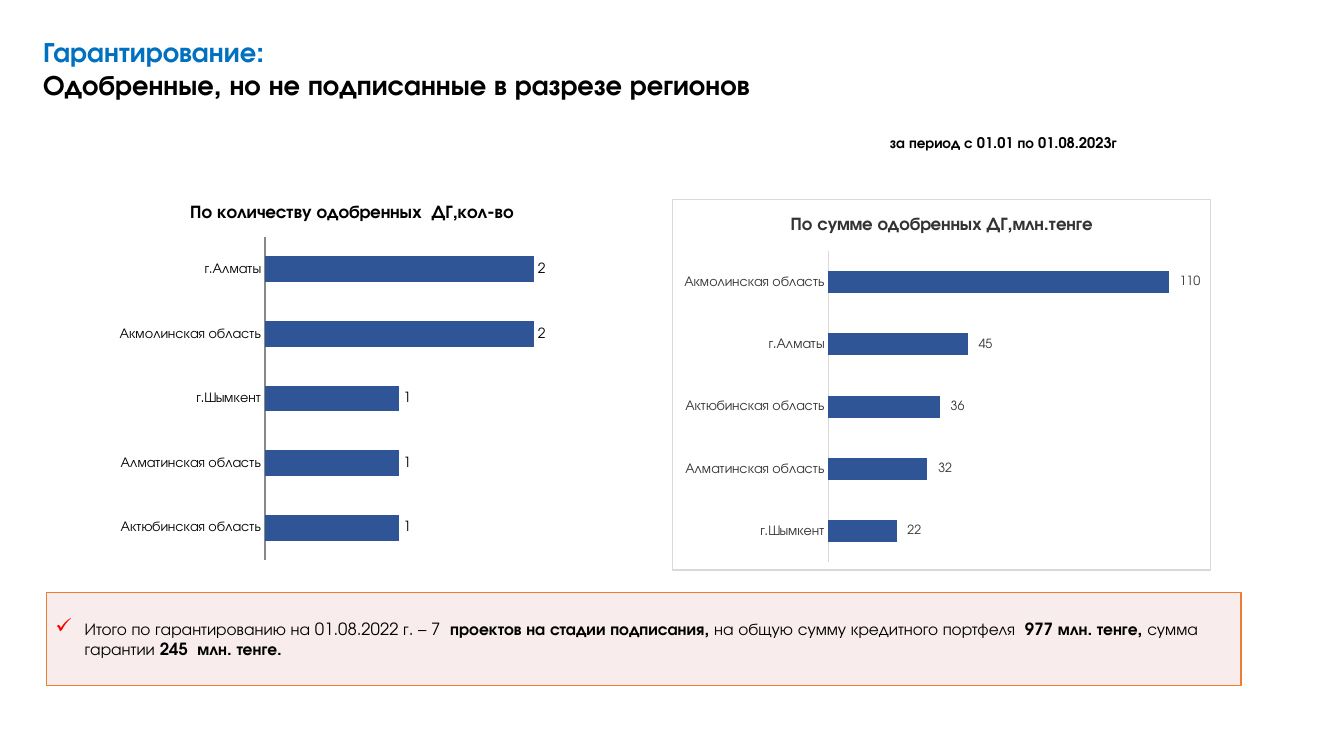
"""Build the slide on approved but unsigned guarantees by region."""
import dataclasses

import lxml.etree
import pptx
import pptx.chart.data
import pptx.dml.color
import pptx.enum.chart
import pptx.enum.shapes
import pptx.enum.text
import pptx.oxml.ns
import pptx.util


@dataclasses.dataclass(frozen=True)
class Theme:
    """Hold the fonts, colours and type sizes."""
    font: str = "TeX Gyre Adventor"
    ink: str = "000000"
    soft: str = "333333"
    blue: str = "0070C0"
    bar: str = "2F5597"
    axis: str = "898989"
    pale: str = "D9D9D9"
    paper: str = "FFFFFF"
    rose: str = "F2DCDB"
    edge: str = "ED7D31"
    tick: str = "FF0000"
    head: float = 20
    date: float = 10.5
    note: float = 12
    title: float = 13
    label: float = 10
    small: float = 9


THEME = Theme()
WIDE, HIGH = pptx.util.Inches(13.33), pptx.util.Inches(7.5)
MONEY = '_-* #\\ ##0_р_._-;\\-* #\\ ##0_р_._-;_-* "-"'


def place(left, top, width, height):
    """Turn percentages of the slide into lengths."""
    return (int(WIDE * left / 100), int(HIGH * top / 100),
            int(WIDE * width / 100), int(HIGH * height / 100))


def tint(code):
    """Return the colour of a hex code."""
    return pptx.dml.color.RGBColor.from_string(code)


def style(font, size, color, bold=False):
    """Set face, size, colour and weight of a font."""
    font.name = THEME.font
    font.size = pptx.util.Pt(size)
    font.bold = bold
    font.color.rgb = tint(color)


def add_run(para, text, size, color, bold=False):
    """Add one styled run."""
    run = para.add_run()
    run.text = text
    style(run.font, size, color, bold)


def add_node(root, tag, **attrs):
    """Append an XML element with attributes."""
    return lxml.etree.SubElement(root, pptx.oxml.ns.qn(tag), attrs)


def add_text(slide, area, lines, size, wrap=True):
    """Add a box of bold coloured lines."""
    frame = slide.shapes.add_textbox(*place(*area)).text_frame
    frame.word_wrap = wrap
    para = frame.paragraphs[0]
    for index, (text, color) in enumerate(lines):
        if index:
            para.add_line_break()
        add_run(para, text, size, color, True)


def add_note(slide, area, parts):
    """Add the tinted panel with its ticked summary."""
    panel = slide.shapes.add_shape(
        pptx.enum.shapes.MSO_SHAPE.RECTANGLE, *place(*area))
    panel.shadow.inherit = False
    panel.fill.solid()
    panel.fill.fore_color.rgb = tint(THEME.rose)
    shade = panel.element.spPr.find(".//" + pptx.oxml.ns.qn("a:srgbClr"))
    add_node(shade, "a:alpha", val="50000")
    panel.line.color.rgb = tint(THEME.edge)
    panel.line.width = pptx.util.Pt(1)
    frame = panel.text_frame
    frame.word_wrap = True
    frame.vertical_anchor = pptx.enum.text.MSO_ANCHOR.MIDDLE
    frame.margin_left = frame.margin_right = pptx.util.Inches(0.08)
    frame.margin_top = frame.margin_bottom = pptx.util.Inches(0.04)
    para = frame.paragraphs[0]
    para.alignment = pptx.enum.text.PP_ALIGN.LEFT
    para.space_after = pptx.util.Pt(6)
    props = para._p.get_or_add_pPr()
    props.set("marL", str(pptx.util.Inches(0.3)))
    props.set("indent", str(pptx.util.Inches(-0.29)))
    add_node(add_node(props, "a:buClr"), "a:srgbClr", val=THEME.tick)
    add_node(props, "a:buSzPct", val="125000")
    add_node(props, "a:buChar", char="✓")
    for text, bold in parts:
        add_run(para, text, THEME.note, THEME.ink, bold)


def set_plot(chart, shares):
    """Fix the inner plot area as shares of the chart."""
    area = chart.element.find(".//" + pptx.oxml.ns.qn("c:plotArea"))
    old = area.find(pptx.oxml.ns.qn("c:layout"))
    if old is not None:
        area.remove(old)
    layout = add_node(area, "c:layout")
    area.insert(0, layout)
    manual = add_node(layout, "c:manualLayout")
    add_node(manual, "c:layoutTarget", val="inner")
    for tag in ("xMode", "yMode"):
        add_node(manual, "c:" + tag, val="edge")
    for tag, share in zip("xywh", shares):
        add_node(manual, "c:" + tag, val=str(share))


def set_frame(chart):
    """Give the chart a white ground and a pale border."""
    space = chart.element
    props = add_node(space, "c:spPr")
    fill = add_node(props, "a:solidFill")
    add_node(fill, "a:srgbClr", val=THEME.paper)
    line = add_node(props, "a:ln", w=str(pptx.util.Pt(0.75)))
    add_node(add_node(line, "a:solidFill"), "a:srgbClr", val=THEME.pale)
    space.find(pptx.oxml.ns.qn("c:chart")).addnext(props)


def add_bars(slide, area, title, rows, top, gap, plot, color, rule,
             size, form="General"):
    """Add a bar chart with value labels and return it."""
    data = pptx.chart.data.CategoryChartData(number_format=form)
    data.categories = [name for name, _ in rows]
    data.add_series("Series 1", [value for _, value in rows])
    chart = slide.shapes.add_chart(
        pptx.enum.chart.XL_CHART_TYPE.BAR_CLUSTERED, *place(*area), data).chart
    style(chart.font, THEME.label, color)
    chart.has_legend = False
    chart.has_title = True
    add_run(chart.chart_title.text_frame.paragraphs[0], title,
            THEME.title, color, True)
    axis = chart.category_axis
    axis.major_tick_mark = pptx.enum.chart.XL_TICK_MARK.NONE
    axis.has_major_gridlines = False
    axis.format.line.color.rgb = tint(rule)
    axis.format.line.width = pptx.util.Pt(0.75)
    style(axis.tick_labels.font, THEME.label, color)
    scale = chart.value_axis
    scale.minimum_scale, scale.maximum_scale = 0, top
    scale.has_major_gridlines = False
    scale.visible = False
    bars = chart.plots[0]
    bars.gap_width = gap
    bars.vary_by_categories = False
    fill = bars.series[0].format.fill
    fill.solid()
    fill.fore_color.rgb = tint(THEME.bar)
    bars.has_data_labels = True
    labels = bars.data_labels
    labels.show_value = True
    labels.number_format = form
    labels.number_format_is_linked = False
    labels.position = pptx.enum.chart.XL_LABEL_POSITION.OUTSIDE_END
    style(labels.font, size, color)
    set_plot(chart, plot)
    return chart


def main():
    """Build and save the slide."""
    deck = pptx.Presentation()
    deck.slide_width, deck.slide_height = WIDE, HIGH
    slide = deck.slides.add_slide(deck.slide_layouts[6])
    add_text(slide, (2.48, 3.87, 59.03, 14.8), [
        ("Гарантирование:", THEME.blue),
        ("Одобренные, но не подписанные в разрезе регионов", THEME.ink),
    ], THEME.head)
    add_text(slide, (65.48, 17.07, 19.35, 3.73),
             [("за период с 01.01 по 01.08.2023г", THEME.ink)],
             THEME.date, wrap=False)
    add_note(slide, (3.45, 78.4, 88.88, 12.27), [
        ("Итого по гарантированию на 01.08.2022 г. – 7 ", False),
        (" проектов на стадии подписания, ", True),
        ("на общую сумму кредитного портфеля  ", False),
        ("977 млн. тенге, ", True),
        ("сумма гарантии", False),
        (" 245  млн. тенге.", True)])
    add_bars(slide, (6, 24.67, 40.35, 51.47),
             "По количеству одобренных  ДГ,кол-во",
             [("Актюбинская область", 1), ("Алматинская область", 1),
              ("г.Шымкент", 1), ("Акмолинская область", 2), ("г.Алматы", 2)],
             2.5, 150, (0.34, 0.13, 0.62, 0.83), THEME.ink, THEME.axis,
             THEME.label)
    sums = add_bars(slide, (50, 26.27, 40.35, 49.2),
                    "По сумме одобренных ДГ,млн.тенге",
                    [("г.Шымкент", 22), ("Алматинская область", 32),
                     ("Актюбинская область", 36), ("г.Алматы", 45),
                     ("Акмолинская область", 110)],
                    120, 182, (0.29, 0.14, 0.69, 0.84), THEME.soft, THEME.pale,
                    THEME.small, MONEY)
    set_frame(sums)
    deck.save("out.pptx")


if __name__ == "__main__":
    main()
